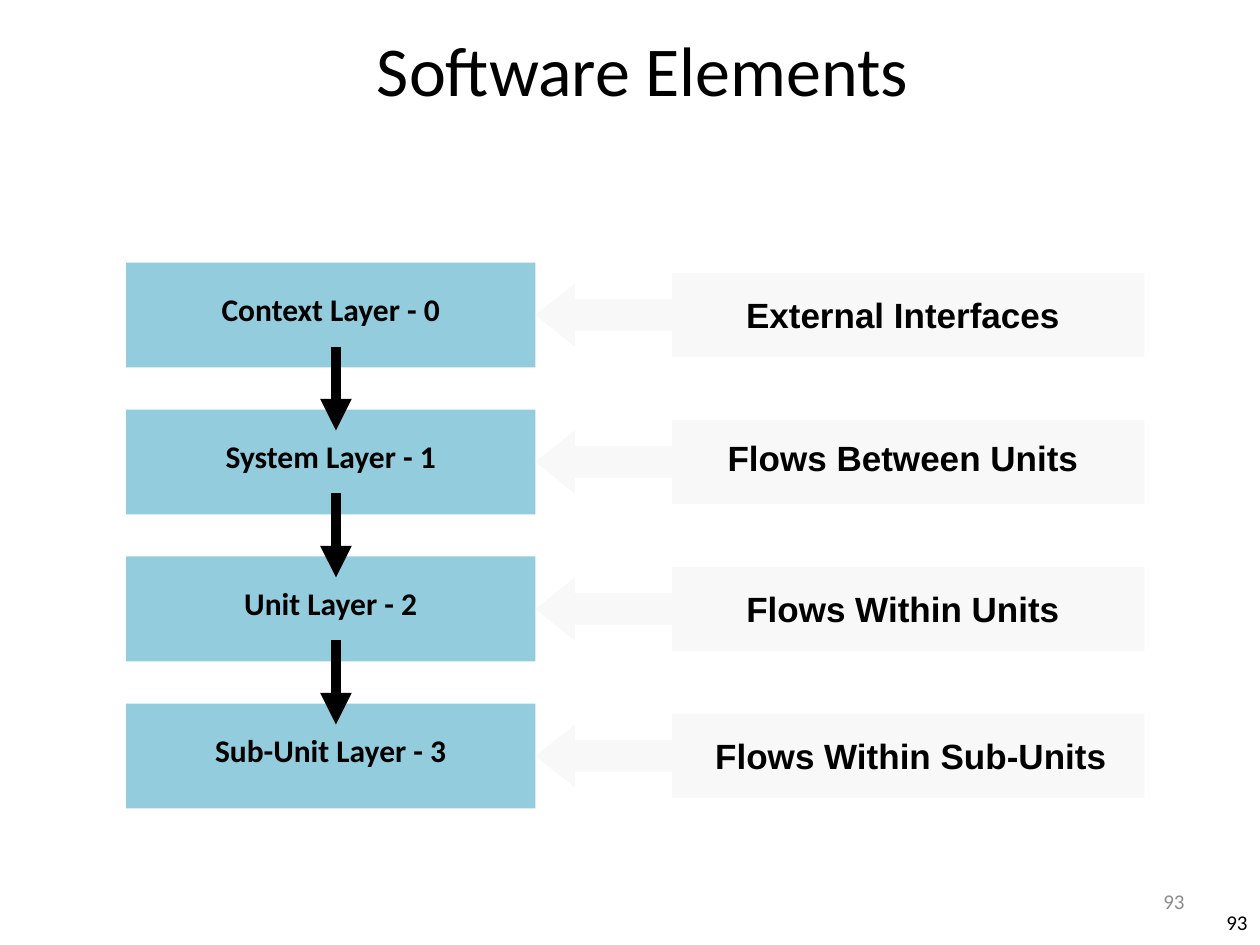
"""Build the Software Elements slide: four layers with the flows that enter them."""
from lxml.etree import SubElement
from pptx import Presentation
from pptx.dml.color import RGBColor
from pptx.enum.shapes import MSO_CONNECTOR, MSO_SHAPE
from pptx.enum.text import MSO_ANCHOR, PP_ALIGN
from pptx.oxml.ns import qn
from pptx.util import Inches, Pt

COLORS = {"layer": "93CDDD", "flow": "F8F8F8", "text": "000000", "muted": "8C8C8C"}
UNIT = Inches(1) / 12
FIRST_ROW, ROW_PITCH = 25, 14
LAYERS = [
    ("Context Layer - 0", "External Interfaces", 69, 2.4),
    ("System Layer - 1", "Flows Between Units", 69, 2),
    ("Unit Layer - 2", "Flows Within Units", 69, 2.4),
    ("Sub-Unit Layer - 3", "Flows Within Sub-Units", 69.75, 2.4),
]

presentation = Presentation()
presentation.slide_width, presentation.slide_height = Inches(10), Inches(7.5)
slide = presentation.slides.add_slide(presentation.slide_layouts[6])


def add_block(kind, color, *box):
    shape = slide.shapes.add_shape(kind, *(round(length * UNIT) for length in box))
    shape.shadow.inherit = False
    shape.fill.solid()
    shape.fill.fore_color.rgb = RGBColor.from_string(COLORS[color])
    shape.line.fill.background()
    return shape


def add_label(text, size, box, font="Calibri", color="text", bold=False,
              align=PP_ALIGN.CENTER, anchor=MSO_ANCHOR.TOP):
    label = slide.shapes.add_textbox(*(round(length * UNIT) for length in box))
    frame = label.text_frame
    frame.word_wrap = True
    frame.vertical_anchor = anchor
    frame.text = text
    paragraph = frame.paragraphs[0]
    paragraph.alignment = align
    run_font = paragraph.runs[0].font
    run_font.name, run_font.size, run_font.bold = font, Pt(size), bold
    run_font.color.rgb = RGBColor.from_string(COLORS[color])


add_label("93", 12, (111, 85.4, 9, 4.8), align=PP_ALIGN.RIGHT, anchor=MSO_ANCHOR.MIDDLE)
add_label("Software Elements", 40, (11.7, 1, 99, 11), anchor=MSO_ANCHOR.MIDDLE)

for index, (layer, flow, flow_center, flow_offset) in enumerate(LAYERS):
    top = FIRST_ROW + index * ROW_PITCH
    add_block(MSO_SHAPE.RECTANGLE, "layer", 12, top, 39, 10)
    add_label(layer, 18, (13.5, top + 2, 36, 6), bold=True)
    add_block(MSO_SHAPE.RECTANGLE, "flow", 64, top + 1, 45, 8)
    add_label(flow, 20, (flow_center + 17 - 21, top + flow_offset, 42, 5.2), "Arial", bold=True)
    flow_arrow = add_block(MSO_SHAPE.LEFT_ARROW, "flow", 51, top + 2, 15, 6)
    flow_arrow.adjustments[0], flow_arrow.adjustments[1] = 0.5, 0.625
    if index > 0:
        ends = (round(length * UNIT) for length in (32, top - 6, 32, top + 2))
        connector = slide.shapes.add_connector(MSO_CONNECTOR.STRAIGHT, *ends)
        connector.line.width = Pt(6)
        connector.line.color.rgb = RGBColor.from_string(COLORS["text"])
        SubElement(connector.line._get_or_add_ln(), qn("a:tailEnd"), type="triangle")
        SubElement(connector._element.spPr, qn("a:effectLst"))

add_label("93", 12, (86, 83.4, 28, 4.8), color="muted",
          align=PP_ALIGN.RIGHT, anchor=MSO_ANCHOR.MIDDLE)

presentation.save("out.pptx")
